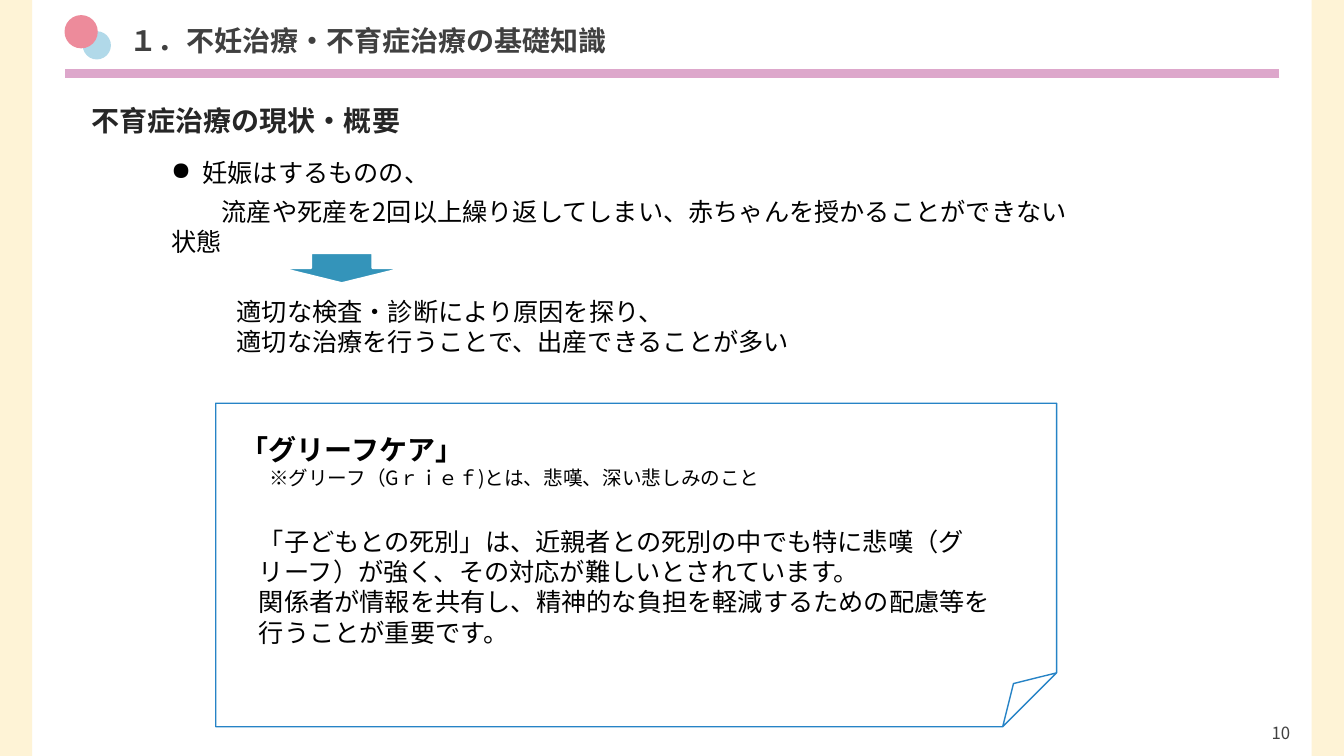
from lxml import etree
from pptx import Presentation
from pptx.dml.color import RGBColor
from pptx.enum.shapes import MSO_CONNECTOR, MSO_SHAPE
from pptx.enum.text import MSO_ANCHOR, MSO_AUTO_SIZE, PP_ALIGN
from pptx.oxml.ns import qn
from pptx.util import Inches, Pt

RECTANGLE, ELLIPSE = MSO_SHAPE.RECTANGLE, MSO_SHAPE.OVAL
DOWN_ARROW, FOLDED_CORNER = MSO_SHAPE.DOWN_ARROW, MSO_SHAPE.FOLDED_CORNER
STRAIGHT = MSO_CONNECTOR.STRAIGHT
TOP, MIDDLE = MSO_ANCHOR.TOP, MSO_ANCHOR.MIDDLE
LEFT, CENTER = PP_ALIGN.LEFT, PP_ALIGN.CENTER
GROW = MSO_AUTO_SIZE.SHAPE_TO_FIT_TEXT


def color(value):
    return RGBColor.from_string(value)


class SlideBuilder:
    """Draws styled elements on the current page."""

    font = "Noto Sans CJK JP"

    def __init__(self, page):
        self.page = page

    def shape(self, kind, area, fill=None, line=None, width=1):
        shape = self.page.shapes.add_shape(kind, *map(Inches, area))
        shape.shadow.inherit = False
        if fill:
            shape.fill.solid()
            shape.fill.fore_color.rgb = color(fill)
        else:
            shape.fill.background()
        if line:
            shape.line.color.rgb = color(line)
            shape.line.width = Pt(width)
        else:
            shape.line.fill.background()

    def rule(self, start, end, line, width):
        rule = self.page.shapes.add_connector(STRAIGHT, *map(Inches, start + end))
        rule.line.color.rgb = color(line)
        rule.line.width = Pt(width)
        etree.SubElement(rule._element.spPr, qn("a:effectLst"))

    def text(self, area, paragraphs, size=18, ink="000000", bold=False,
             align=LEFT, anchor=TOP):
        box = self.page.shapes.add_textbox(*map(Inches, area))
        frame = box.text_frame
        settings = {"word_wrap": True, "auto_size": GROW, "vertical_anchor": anchor}
        for name, value in settings.items():
            setattr(frame, name, value)
        for index, content in enumerate(paragraphs):
            para = frame.paragraphs[0] if index == 0 else frame.add_paragraph()
            self.paragraph(para, {"size": size, "ink": ink, "bold": bold,
                                  "align": align, **content})

    def paragraph(self, para, look):
        para.alignment = look["align"]
        if "before" in look:
            para.space_before = Pt(look["before"])
        margin, indent = look.get("indent", (0, 0))
        properties = para._p.get_or_add_pPr()
        properties.set("marL", str(Inches(margin)))
        properties.set("indent", str(Inches(indent)))
        if "bullet" in look:
            etree.SubElement(properties, qn("a:buChar"), char=look["bullet"])
        span = para.add_run()
        span.text = look["text"]
        settings = {"size": Pt(look["size"]), "bold": look["bold"], "name": self.font}
        for name, value in settings.items():
            setattr(span.font, name, value)
        span.font.color.rgb = color(look["ink"])
        etree.SubElement(span._r.get_or_add_rPr(), qn("a:ea"), typeface=self.font)


def main():
    deck = Presentation()
    deck.slide_width, deck.slide_height = Inches(13.33), Inches(7.5)
    builder = SlideBuilder(deck.slides.add_slide(deck.slide_layouts[6]))

    for left in (0, 13.01):
        builder.shape(RECTANGLE, (left, 0, 0.32, 7.5), "FEF3D6")
    builder.text((12.32, 7.07, 0.77, 0.39), [{"text": "10"}], 12, "404040",
                 align=CENTER, anchor=MIDDLE)
    builder.rule((12.69, 0.73), (0.64, 0.73), "DDA7CB", 6)
    builder.shape(ELLIPSE, (0.82, 0.31, 0.28, 0.28), "B1D9E9")
    builder.shape(ELLIPSE, (0.64, 0.15, 0.33, 0.33), "ED8B9B")

    builder.text((1.19, 0.18, 7.49, 0.44),
                 [{"text": "１．不妊治療・不育症治療の基礎知識"}], 20, "404040", True)
    builder.text((0.81, 0.98, 9.73, 0.44),
                 [{"text": "不育症治療の現状・概要"}], 20, "262626", True)

    builder.text((1.6, 1.51, 9.3, 0.79), [
        {"text": "妊娠はするものの、", "bullet": "●", "indent": (0.31, -0.31)},
        {"text": "流産や死産を2回以上繰り返してしまい、赤ちゃんを授かることができない状態",
         "indent": (0, 0.5), "before": 6},
    ])
    builder.shape(DOWN_ARROW, (2.78, 2.51, 1.22, 0.3), "3494BA", "FFFFFF", 1.5)
    builder.text((2.25, 2.89, 6.57, 0.71), [
        {"text": "適切な検査・診断により原因を探り、"},
        {"text": "適切な治療を行うことで、出産できることが多い"},
    ])

    builder.shape(FOLDED_CORNER, (2.14, 4, 8.34, 3.21), line="2683C6")
    builder.text((2.29, 4.24, 8.91, 0.77), [
        {"text": "「グリーフケア」", "size": 20, "bold": True},
        {"text": "※グリーフ（Gｒｉｅｆ)とは、悲嘆、深い悲しみのこと",
         "size": 14, "indent": (0.28, 0)},
    ])
    builder.text((2.47, 5.17, 7.64, 1.31), [
        {"text": "「子どもとの死別」は、近親者との死別の中でも特に悲嘆（グリーフ）が強く、"
                 "その対応が難しいとされています。"},
        {"text": "関係者が情報を共有し、精神的な負担を軽減するための配慮等を行うことが重要です。"},
    ])
    deck.save("out.pptx")


if __name__ == "__main__":
    main()
